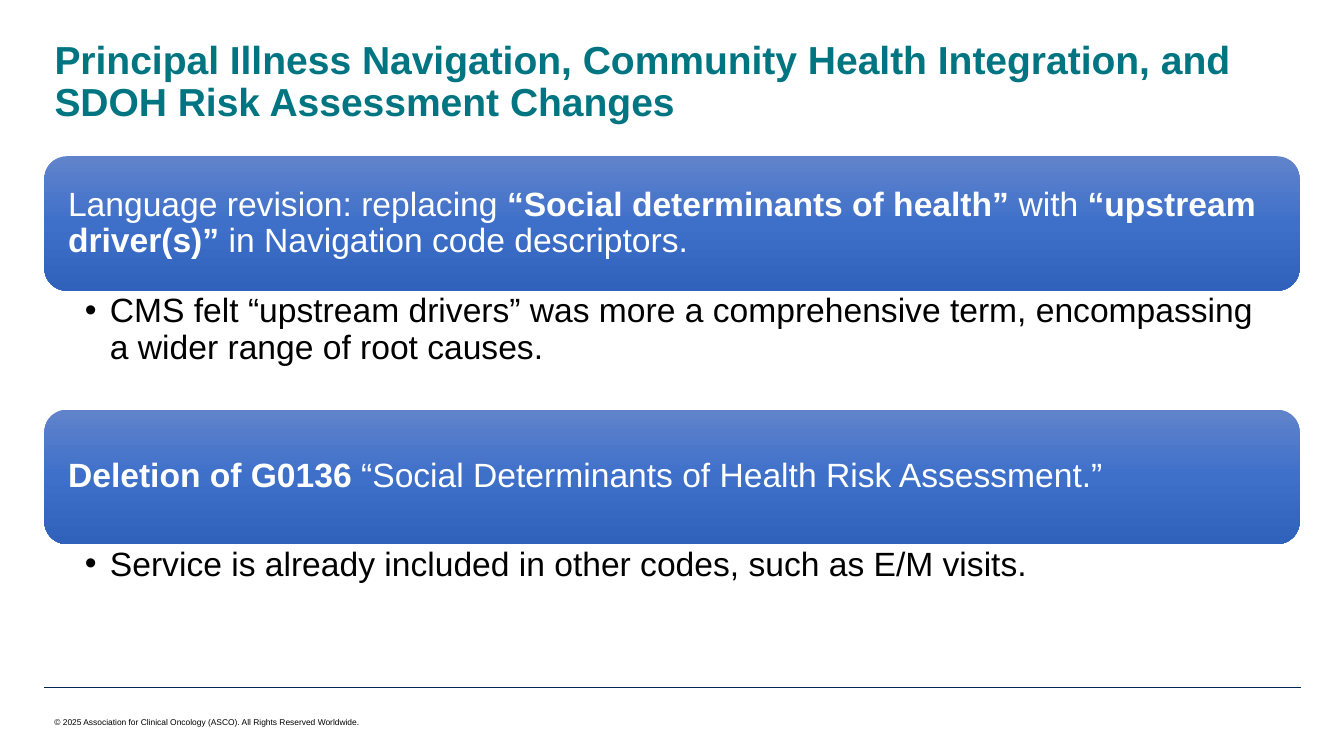
from lxml import etree
from pptx import Presentation
from pptx.dml.color import RGBColor
from pptx.enum.shapes import MSO_CONNECTOR, MSO_SHAPE
from pptx.enum.text import MSO_ANCHOR, MSO_AUTO_SIZE, PP_ALIGN
from pptx.oxml.ns import qn
from pptx.util import Pt

STRAIGHT = MSO_CONNECTOR.STRAIGHT
ROUNDED = MSO_SHAPE.ROUNDED_RECTANGLE
TOP, MIDDLE, BOTTOM = MSO_ANCHOR.TOP, MSO_ANCHOR.MIDDLE, MSO_ANCHOR.BOTTOM
LEFT_ALIGN = PP_ALIGN.LEFT
NO_FIT = MSO_AUTO_SIZE.NONE

TEAL = RGBColor(0x00, 0x75, 0x82)
NAVY = RGBColor(0x00, 0x25, 0x57)
WHITE = RGBColor(0xFF, 0xFF, 0xFF)
BLACK = RGBColor(0x00, 0x00, 0x00)
BANNER_BLUES = [
    (0, RGBColor(0x61, 0x83, 0xCB)),
    (50, RGBColor(0x3E, 0x70, 0xCA)),
    (100, RGBColor(0x30, 0x62, 0xBB)),
]

LEFT, WIDTH = 31.75, 896.5
FIRST_TOP, BANNER_HEIGHT, LIST_HEIGHT = 111.6, 96, 85

# Each topic: banner runs as (text, bold), then its bullet
TOPICS = [
    ([("Language revision: replacing ", False),
      ("“Social determinants of health” ", True),
      ("with ", False),
      ("“upstream driver(s)”", True),
      (" in Navigation code descriptors.", False)],
     "CMS felt “upstream drivers” was more a comprehensive term, "
     "encompassing a wider range of root causes."),
    ([("Deletion of G0136 ", True),
      ("“Social Determinants of Health Risk Assessment.”", False)],
     "Service is already included in other codes, such as E/M visits."),
]


def format_para(para, size, color):
    para.alignment = LEFT_ALIGN
    para.line_spacing = 0.9
    para.space_before = Pt(0)
    para.font.name = "Arial"
    para.font.size = Pt(size)
    para.font.color.rgb = color


def place(shape, top, height, anchor, insets):
    """Set a full-width shape and its text frame; insets are left, top, right, bottom."""
    shape.left, shape.top = Pt(LEFT), Pt(top)
    shape.width, shape.height = Pt(WIDTH), Pt(height)
    frame = shape.text_frame
    frame.word_wrap = True
    frame.auto_size = NO_FIT
    frame.vertical_anchor = anchor
    (frame.margin_left, frame.margin_top,
     frame.margin_right, frame.margin_bottom) = [Pt(inset) for inset in insets]


deck = Presentation()
deck.slide_width, deck.slide_height = Pt(960), Pt(540)
page = deck.slides.add_slide(deck.slide_layouts.get_by_name("Two Content"))

# Title
title = page.shapes.title
place(title, 17.3, 75.6, BOTTOM, (7.2, 3.6, 7.2, 3.6))
title.text_frame.text = ("Principal Illness Navigation, Community Health Integration, "
                         "and SDOH Risk Assessment Changes")
heading = title.text_frame.paragraphs[0]
format_para(heading, 27.9, TEAL)
heading.font.bold = True

# Banners, each with its bullet list below
for index, (banner_runs, bullet) in enumerate(TOPICS):
    top = FIRST_TOP + index * (BANNER_HEIGHT + LIST_HEIGHT)

    banner = page.shapes.add_shape(ROUNDED, 0, 0, 0, 0)
    place(banner, top, BANNER_HEIGHT, MIDDLE, (12.2, 7.2, 12.2, 7.2))
    banner.shadow.inherit = False
    banner.line.fill.background()
    banner.fill.gradient()
    banner.fill.gradient_angle = 270
    stops = banner.fill._fill._gradFill.find(qn("a:gsLst"))
    for stop in list(stops):
        stops.remove(stop)
    for percent, blue in BANNER_BLUES:
        stop = etree.SubElement(stops, qn("a:gs"), pos=str(percent * 1000))
        etree.SubElement(stop, qn("a:srgbClr"), val=str(blue))
    para = banner.text_frame.paragraphs[0]
    format_para(para, 24, WHITE)
    for text, bold in banner_runs:
        span = para.add_run()
        span.text = text
        span.font.bold = bold

    body = page.placeholders[index + 1]
    place(body, top + BANNER_HEIGHT, LIST_HEIGHT, TOP, (28.8, 2.2, 13.7, 2.2))
    body.text_frame.text = bullet
    para = body.text_frame.paragraphs[0]
    properties = para._p.get_or_add_pPr()
    properties.set("marL", str(Pt(18)))
    properties.set("indent", str(-Pt(18)))
    etree.SubElement(properties, qn("a:buChar"), char="•")
    format_para(para, 24, BLACK)

# Footer
rule = page.shapes.add_connector(STRAIGHT, Pt(LEFT), Pt(491), Pt(929.5), Pt(491))
rule.line.color.rgb = NAVY
rule.line.width = Pt(0.25)
etree.SubElement(rule._element.spPr, qn("a:effectLst"))

footer = page.shapes.add_textbox(Pt(LEFT), Pt(508.5), Pt(237.6), Pt(14.4))
footer.text_frame.word_wrap = False
footer.text_frame.text = ("© 2025 Association for Clinical Oncology (ASCO). "
                          "All Rights Reserved Worldwide.")
copyright_line = footer.text_frame.paragraphs[0]
format_para(copyright_line, 6, BLACK)
copyright_line.line_spacing = 1.0

deck.save("out.pptx")
